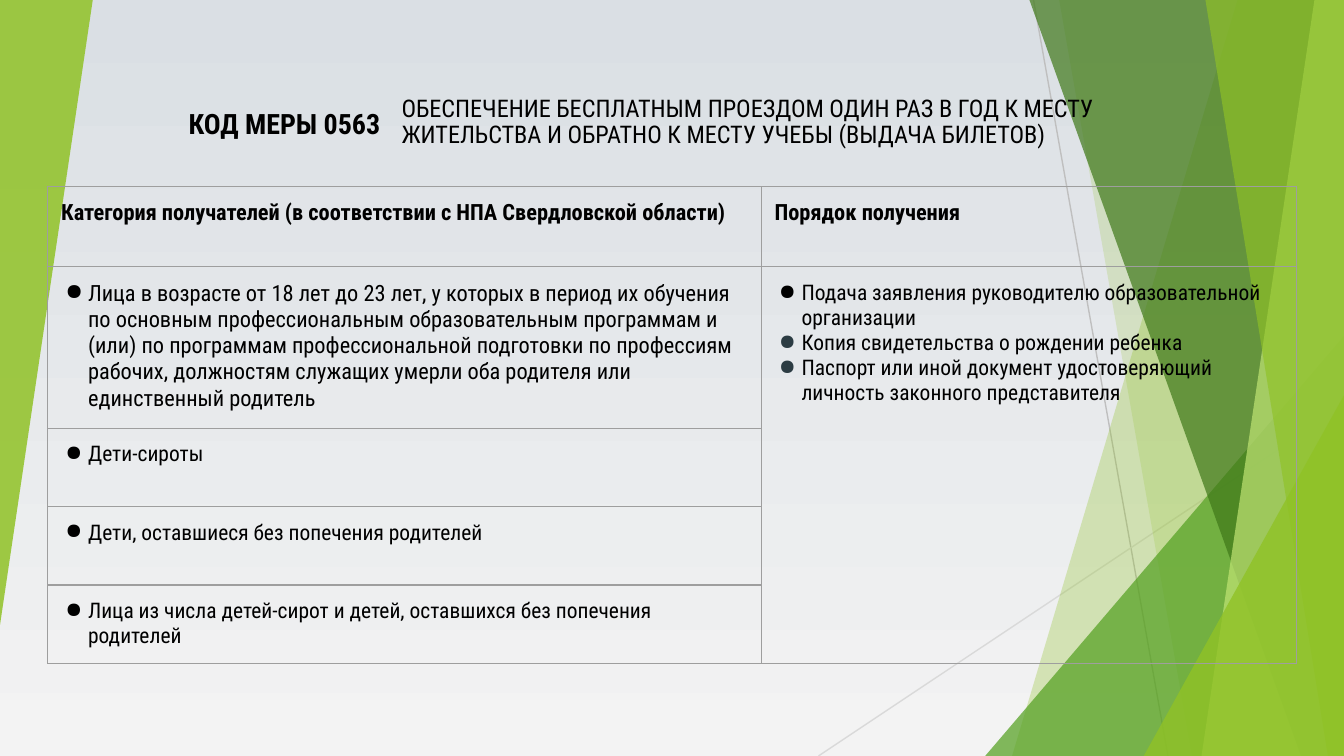
from dataclasses import dataclass

from lxml import etree
from pptx import Presentation
from pptx.dml.color import RGBColor
from pptx.enum.shapes import MSO_CONNECTOR, MSO_SHAPE
from pptx.enum.text import MSO_ANCHOR, PP_ALIGN
from pptx.oxml.ns import qn
from pptx.util import Pt

TRIANGLE = MSO_SHAPE.ISOSCELES_TRIANGLE
STRAIGHT = MSO_CONNECTOR.STRAIGHT
MIDDLE = MSO_ANCHOR.MIDDLE
LEFT, RIGHT = PP_ALIGN.LEFT, PP_ALIGN.RIGHT

WIDTH, HEIGHT = 720, 405
FONT = "Roboto Condensed"
COLORS = {
    "sky": "DADFE4", "mist": "F3F3F3", "text": "000000", "slate": "2C3C43",
    "border": "9E9E9E", "ray": "BFBFBF", "pale_ray": "D9D9D9",
    "lime": "90C226", "green": "54A021", "forest": "3F7819", "light": "C0E474",
}


@dataclass
class Ray:
    start: tuple[float, float]
    end: tuple[float, float]
    color: str


@dataclass
class Pane:
    """Four-sided pane running from the slide's top to its bottom."""
    top_left: float
    bottom_left: float
    color: str
    opacity: int


@dataclass
class Corner:
    """Right-angled triangle in a corner of the slide."""
    left: float
    top: float
    width: float
    height: float
    color: str
    opacity: int
    rotation: int = 0


@dataclass
class Item:
    text: str
    size: float = 11.5
    bold: bool = False
    bullet: str | None = "text"


RAYS = [
    Ray((553.7, 0), (625.7, HEIGHT), "ray"),
    Ray((WIDTH, 217.4), (438.5, HEIGHT), "pale_ray"),
]
FACETS = [
    Pane(663, 542.2, "lime", 30),
    Pane(567.4, 638.6, "lime", 20),
    Corner(527.8, 180, 192.2, 225, "green", 72),
    Pane(551.5, 697, "forest", 70),
    Pane(704.2, 643.7, "light", 70),
    Pane(645.8, 711.4, "lime", 65),
    Corner(612.7, 211.7, 107.3, 193.3, "lime", 80),
    Corner(0, 0, 49.7, 334.8, "lime", 85, 180),
]
COLUMNS = [382.2, 286.8]
ROWS = [43, 86.5, 42, 42, 42]
HEADINGS = [
    "Категория получателей (в соответствии с НПА Свердловской области)",
    "Порядок получения",
]
RECIPIENTS = [
    Item("Лица в возрасте от 18 лет до 23 лет, у которых в период их обучения "
         "по основным профессиональным образовательным программам и (или) по "
         "программам профессиональной подготовки по профессиям рабочих, "
         "должностям служащих умерли оба родителя или единственный родитель", 12),
    Item("Дети-сироты"),
    Item("Дети, оставшиеся без попечения родителей"),
    Item("Лица из числа детей-сирот и детей, оставшихся без попечения родителей"),
]
PROCEDURE = [
    Item("Подача заявления руководителю образовательной организации"),
    Item("Копия свидетельства о рождении ребенка", bullet="slate"),
    Item("Паспорт или иной документ удостоверяющий личность законного "
         "представителя", bullet="slate"),
]


def rgb(name: str) -> RGBColor:
    return RGBColor.from_string(COLORS[name])


def paint(shape, color: str, opacity: int) -> None:
    shape.shadow.inherit = False
    shape.line.fill.background()
    shape.fill.solid()
    shape.fill.fore_color.rgb = rgb(color)
    srgb = shape.fill._xPr.find(".//" + qn("a:srgbClr"))
    etree.SubElement(srgb, qn("a:alpha"), val=str(opacity * 1000))


def draw_ray(slide, ray: Ray) -> None:
    points = [Pt(v) for v in (*ray.start, *ray.end)]
    line = slide.shapes.add_connector(STRAIGHT, *points)
    line.line.color.rgb = rgb(ray.color)
    line.line.width = Pt(0.75)
    etree.SubElement(line._element.spPr, qn("a:effectLst"))


def draw_pane(slide, pane: Pane) -> None:
    builder = slide.shapes.build_freeform(Pt(pane.top_left), 0)
    corners = [(WIDTH, 0), (WIDTH, HEIGHT), (pane.bottom_left, HEIGHT)]
    builder.add_line_segments([(Pt(x), Pt(y)) for x, y in corners], close=True)
    paint(builder.convert_to_shape(), pane.color, pane.opacity)


def draw_corner(slide, corner: Corner) -> None:
    box = [Pt(v) for v in (corner.left, corner.top, corner.width, corner.height)]
    shape = slide.shapes.add_shape(TRIANGLE, *box)
    shape.adjustments[0] = 1
    shape.rotation = corner.rotation
    paint(shape, corner.color, corner.opacity)


def write(paragraph, text: str, *, size: float, bold: bool = False,
          align=LEFT, spacing: float = 1.0, bullet: str | None = None) -> None:
    paragraph.alignment = align
    paragraph.line_spacing = spacing
    run = paragraph.add_run()
    run.text = text
    run.font.name, run.font.size, run.font.bold = FONT, Pt(size), bold
    run.font.color.rgb = rgb("text")
    if bullet:
        props = paragraph._p.get_or_add_pPr()
        props.set("marL", str(Pt(14.4)))
        props.set("indent", str(Pt(-12.2)))
        color = etree.SubElement(props, qn("a:buClr"))
        etree.SubElement(color, qn("a:srgbClr"), val=COLORS[bullet])
        etree.SubElement(props, qn("a:buChar"), char="●")


def add_label(slide, box: tuple, insets: tuple, text: str, **style) -> None:
    frame = slide.shapes.add_textbox(*[Pt(v) for v in box]).text_frame
    frame.word_wrap = True
    frame.vertical_anchor = MIDDLE
    frame.margin_left = frame.margin_right = Pt(insets[0])
    frame.margin_top = frame.margin_bottom = Pt(insets[1])
    write(frame.paragraphs[0], text, **style)


def fill_cell(cell, items: list[Item]) -> None:
    cell.margin_left = cell.margin_right = Pt(7.2)
    cell.margin_top = cell.margin_bottom = Pt(7.2)
    frame = cell.text_frame
    for i, item in enumerate(items):
        paragraph = frame.add_paragraph() if i else frame.paragraphs[0]
        write(paragraph, item.text, size=item.size, bold=item.bold, bullet=item.bullet)


def style_cell(cell) -> None:
    props = cell._tc.get_or_add_tcPr()
    for side in ("lnL", "lnR", "lnT", "lnB"):
        border = etree.SubElement(props, qn(f"a:{side}"), w=str(Pt(0.75)))
        fill = etree.SubElement(border, qn("a:solidFill"))
        etree.SubElement(fill, qn("a:srgbClr"), val=COLORS["border"])
    cell.fill.background()


def add_measures_table(slide) -> None:
    table = slide.shapes.add_table(len(ROWS), len(COLUMNS), Pt(25.6), Pt(100),
                                   Pt(sum(COLUMNS)), Pt(sum(ROWS))).table
    table.first_row = table.horz_banding = False
    for column, width in zip(table.columns, COLUMNS):
        column.width = Pt(width)
    for row, height in zip(table.rows, ROWS):
        row.height = Pt(height)
    for cell in table.iter_cells():
        style_cell(cell)
    table.cell(1, 1).merge(table.cell(len(ROWS) - 1, 1))
    for i, heading in enumerate(HEADINGS):
        fill_cell(table.cell(0, i), [Item(heading, 12, True, None)])
    for i, recipient in enumerate(RECIPIENTS, start=1):
        fill_cell(table.cell(i, 0), [recipient])
    fill_cell(table.cell(1, 1), PROCEDURE)


def main() -> None:
    prs = Presentation()
    prs.slide_width, prs.slide_height = Pt(WIDTH), Pt(HEIGHT)
    slide = prs.slides.add_slide(prs.slide_layouts[6])

    # Background, darker at the top
    backdrop = slide.background.fill
    backdrop.gradient()
    backdrop.gradient_angle = 270
    for stop, position, color in zip(backdrop.gradient_stops, (0, 1), ("sky", "mist")):
        stop.position = position
        stop.color.rgb = rgb(color)

    # Green facets
    for ray in RAYS:
        draw_ray(slide, ray)
    for facet in FACETS:
        (draw_pane if isinstance(facet, Pane) else draw_corner)(slide, facet)

    # Title and measure code
    add_label(slide, (210.2, 38.2, 453.6, 55.4), (5, 3),
              "ОБЕСПЕЧЕНИЕ БЕСПЛАТНЫМ ПРОЕЗДОМ ОДИН РАЗ В ГОД К МЕСТУ ЖИТЕЛЬСТВА "
              "И ОБРАТНО К МЕСТУ УЧЕБЫ (ВЫДАЧА БИЛЕТОВ)", size=13, spacing=0.9)
    add_label(slide, (59, 38.2, 151.9, 55.4), (7.2, 7.2), "КОД МЕРЫ 0563",
              size=15, bold=True, align=RIGHT)

    # Recipients and procedure
    add_measures_table(slide)
    prs.save("out.pptx")


if __name__ == "__main__":
    main()
